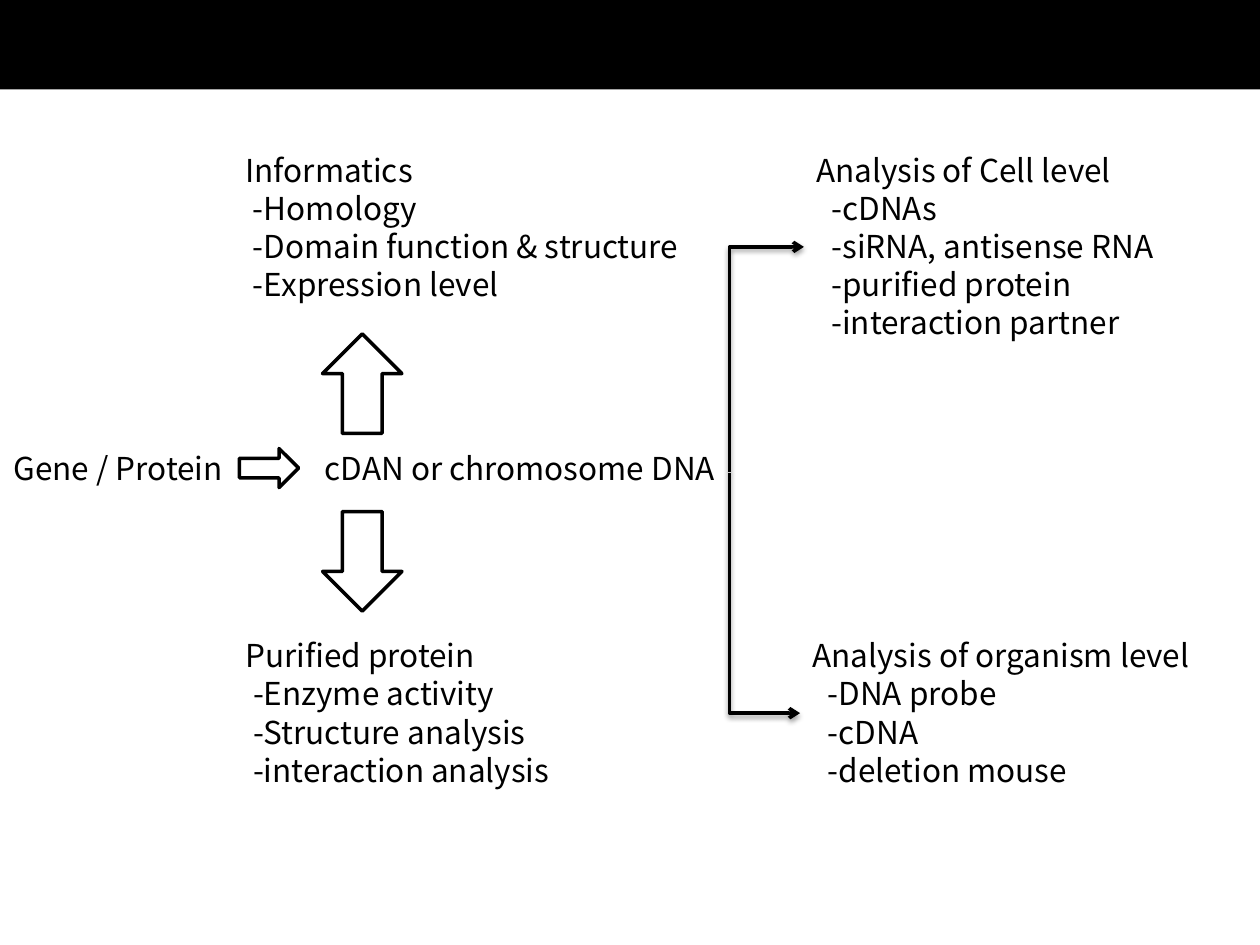
from lxml import etree
from pptx import Presentation
from pptx.dml.color import RGBColor
from pptx.enum.shapes import MSO_CONNECTOR, MSO_SHAPE
from pptx.oxml import parse_xml
from pptx.oxml.ns import nsdecls, qn
from pptx.util import Inches, Pt

FONT = "Noto Sans CJK KR"
COLORS = {"ink": "000000", "paper": "FFFFFF"}
LINE_PITCH = Pt(21.75)

# Text blocks: left, top, width, item indent, heading, items
BLOCKS = [
    (0.01, 3.51, 2.2, 0, "Gene / Protein", []),
    (2.48, 3.51, 3.62, 0, "cDAN or chromosome DNA", []),
    (1.85, 1.15, 3.94, 0.06, "Informatics",
     ["-Homology", "-Domain function & structure", "-Expression level"]),
    (1.85, 5, 3.62, 0.06, "Purified protein",
     ["-Enzyme activity", "-Structure analysis", "-interaction analysis"]),
    (6.38, 1.15, 3.62, 0.12, "Analysis of Cell level",
     ["-cDNAs", "-siRNA, antisense RNA", "-purified protein",
      "-interaction partner"]),
    (6.35, 5, 3.62, 0.12, "Analysis of organism level",
     ["-DNA probe", "-cDNA", "-deletion mouse"]),
]
# Block arrows: left, top, width, height, rotation
ARROWS = [
    (1.9, 3.56, 0.47, 0.31, 0),
    (2.48, 2.73, 0.79, 0.63, 270),
    (2.48, 4.14, 0.79, 0.63, 90),
]
# Branches from the DNA label to the two analysis levels
BRANCH_START = (5.79, 3.75)
BRANCH_ENDS = [(6.35, 5.66), (6.38, 1.96)]

SHADOW = (
    f'<a:effectLst {nsdecls("a")}>'
    f'<a:outerShdw blurRad="{Pt(3.1)}" dist="{Pt(1.6)}" dir="5400000" rotWithShape="0">'
    f'<a:srgbClr val="{COLORS["ink"]}"><a:alpha val="38000"/></a:srgbClr>'
    '</a:outerShdw></a:effectLst>'
)


def rgb(name):
    return RGBColor.from_string(COLORS[name])


def outline(line):
    line.color.rgb = rgb("ink")
    line.width = Pt(2)


def add_shape(slide, kind, box, fill):
    sp = slide.shapes.add_shape(kind, *map(Inches, box))
    sp.shadow.inherit = False
    sp.fill.solid()
    sp.fill.fore_color.rgb = rgb(fill)
    return sp


def add_block(slide, left, top, width, indent, heading, items):
    lines = [heading] + items
    height = Inches(0.1) + LINE_PITCH * len(lines)
    tf = slide.shapes.add_textbox(
        Inches(left), Inches(top), Inches(width), height).text_frame
    tf.word_wrap = True
    for i, text in enumerate(lines):
        p = tf.add_paragraph() if i else tf.paragraphs[0]
        p.line_spacing = LINE_PITCH
        if i:
            p._p.get_or_add_pPr().set("marL", str(Inches(indent)))
        r = p.add_run()
        r.text = text
        r.font.size = Pt(18)
        r.font.name = FONT
        r.font.color.rgb = rgb("ink")


def add_branch(slide, start, end):
    """Vertical-then-horizontal elbow: a turned bentConnector2."""
    (x1, y1), (x2, y2) = start, end
    down = y2 > y1
    w, h = abs(y2 - y1), x2 - x1
    cx, cy = (x1 + x2) / 2, (y1 + y2) / 2
    top, bottom = cy - h / 2, cy + h / 2
    ys = (top, bottom) if down else (bottom, top)
    cxn = slide.shapes.add_connector(
        MSO_CONNECTOR.ELBOW, Inches(cx + w / 2), Inches(ys[0]),
        Inches(cx - w / 2), Inches(ys[1]))
    outline(cxn.line)
    sp_pr = cxn._element.spPr
    sp_pr.find(qn("a:xfrm")).set("rot", str((270 if down else 90) * 60000))
    sp_pr.find(qn("a:prstGeom")).set("prst", "bentConnector2")
    etree.SubElement(sp_pr.find(qn("a:ln")), qn("a:tailEnd"), type="arrow")
    sp_pr.append(parse_xml(SHADOW))


def main():
    prs = Presentation()
    prs.slide_width, prs.slide_height = Inches(10), Inches(7.5)
    slide = prs.slides.add_slide(prs.slide_layouts[6])

    # Header band
    band = add_shape(slide, MSO_SHAPE.RECTANGLE, (0, 0, 10, 0.71), "ink")
    band.line.fill.background()

    # Labels and lists
    for block in BLOCKS:
        add_block(slide, *block)

    # Block arrows
    for *box, rotation in ARROWS:
        arrow = add_shape(slide, MSO_SHAPE.RIGHT_ARROW, box, "paper")
        arrow.rotation = rotation
        outline(arrow.line)

    # Branch connectors
    for end in BRANCH_ENDS:
        add_branch(slide, BRANCH_START, end)

    prs.save("out.pptx")


if __name__ == "__main__":
    main()
